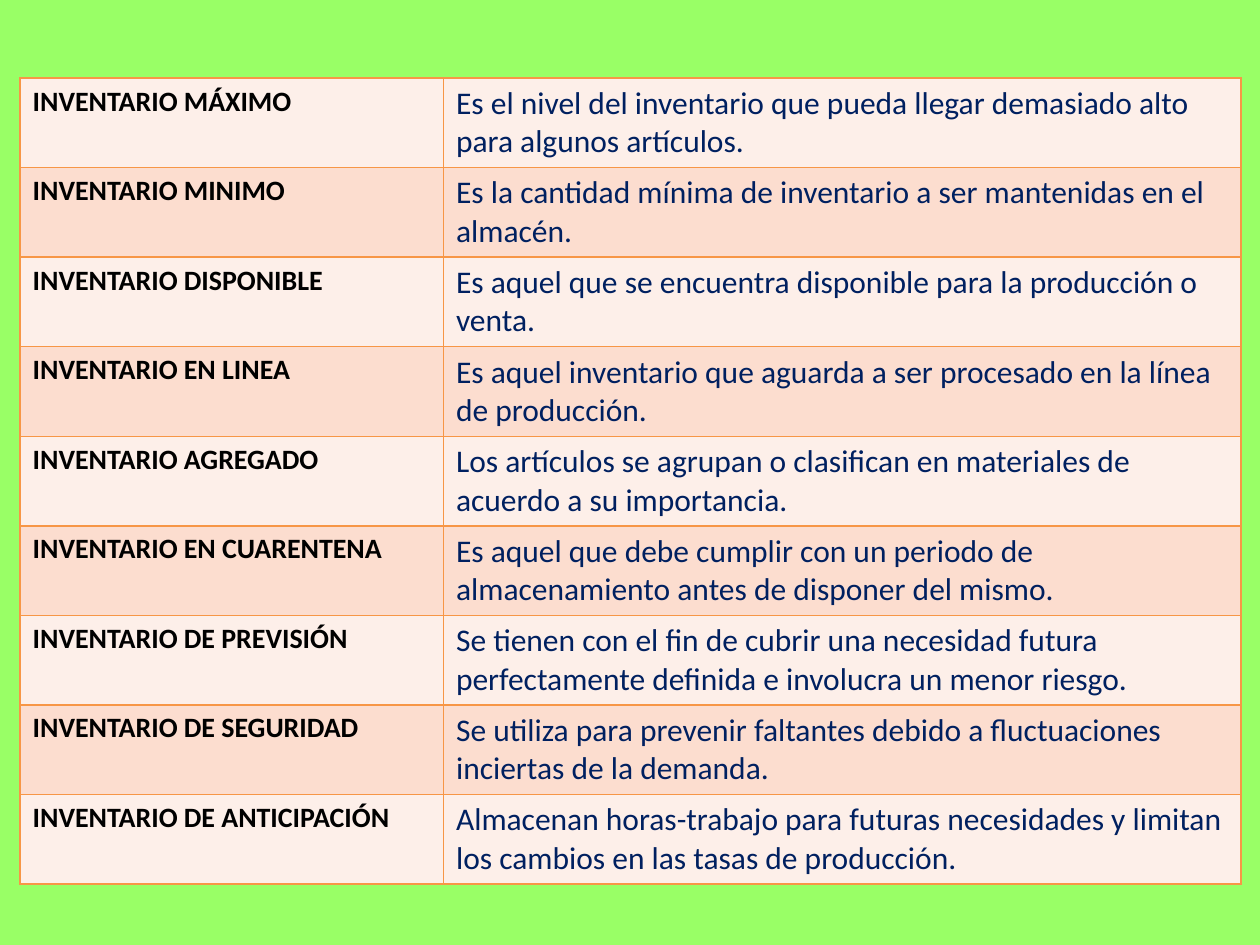
"""Build a slide with a table that defines nine kinds of inventory."""

from dataclasses import dataclass
from typing import NamedTuple

from lxml.etree import SubElement
from pptx import Presentation
from pptx.dml.color import RGBColor
from pptx.oxml.ns import qn
from pptx.slide import Slide
from pptx.table import _Cell
from pptx.util import Inches, Pt


class TextStyle(NamedTuple):
    """Size, colour and weight of a text run."""

    size: int
    color: str
    bold: bool


class InventoryKind(NamedTuple):
    """A kind of inventory and its definition."""

    term: str
    definition: str


@dataclass(frozen=True)
class Theme:
    """Colours, font and type sizes of the slide."""

    font: str = "Calibri"
    background: str = "99FF66"
    border: str = "F79646"
    border_width: int = 1
    bands: tuple[str, str] = ("FDEFE9", "FCDDCF")
    term: TextStyle = TextStyle(16, "000000", True)
    definition: TextStyle = TextStyle(18, "002060", False)


THEME = Theme()
COLUMN_WIDTHS = (3.36, 6.33)
ROW_HEIGHT = 0.7

INVENTORY_KINDS = (
    InventoryKind(
        "INVENTARIO MÁXIMO",
        "Es el nivel del inventario que pueda llegar demasiado alto para algunos artículos.",
    ),
    InventoryKind(
        "INVENTARIO MINIMO",
        "Es la cantidad mínima de inventario a ser mantenidas en el almacén.",
    ),
    InventoryKind(
        "INVENTARIO DISPONIBLE",
        "Es aquel que se encuentra disponible para la producción o venta.",
    ),
    InventoryKind(
        "INVENTARIO EN LINEA",
        "Es aquel inventario que aguarda a ser procesado en la línea de producción.",
    ),
    InventoryKind(
        "INVENTARIO AGREGADO",
        "Los artículos se agrupan o clasifican en materiales de acuerdo a su importancia.",
    ),
    InventoryKind(
        "INVENTARIO EN CUARENTENA",
        "Es aquel que debe cumplir con un periodo de almacenamiento antes de disponer del mismo.",
    ),
    InventoryKind(
        "INVENTARIO DE PREVISIÓN",
        "Se tienen con el fin de cubrir una necesidad futura perfectamente definida "
        "e involucra un menor riesgo.",
    ),
    InventoryKind(
        "INVENTARIO DE SEGURIDAD",
        "Se utiliza para prevenir faltantes debido a fluctuaciones inciertas de la demanda.",
    ),
    InventoryKind(
        "INVENTARIO DE ANTICIPACIÓN",
        "Almacenan horas-trabajo para futuras necesidades y limitan los cambios "
        "en las tasas de producción.",
    ),
)


def draw_borders(cell: _Cell) -> None:
    """Outline all four sides of a cell."""
    properties = cell._tc.get_or_add_tcPr()
    for side in ("a:lnL", "a:lnR", "a:lnT", "a:lnB"):
        border = SubElement(properties, qn(side), w=str(Pt(THEME.border_width)))
        border_fill = SubElement(border, qn("a:solidFill"))
        SubElement(border_fill, qn("a:srgbClr"), val=THEME.border)


def fill_cell(cell: _Cell, wording: str, style: TextStyle, band: str) -> None:
    """Write and format one cell of the table."""
    draw_borders(cell)
    cell.fill.solid()
    cell.fill.fore_color.rgb = RGBColor.from_string(band)
    run = cell.text_frame.paragraphs[0].add_run()
    run.text = wording
    run.font.name = THEME.font
    run.font.size = Pt(style.size)
    run.font.bold = style.bold
    run.font.color.rgb = RGBColor.from_string(style.color)


def draw_glossary(slide: Slide, kinds: tuple[InventoryKind, ...]) -> None:
    """Draw the table of inventory kinds with alternating bands."""
    glossary = slide.shapes.add_table(
        len(kinds),
        len(COLUMN_WIDTHS),
        Inches(0.16),
        Inches(0.62),
        Inches(sum(COLUMN_WIDTHS)),
        Inches(ROW_HEIGHT * len(kinds)),
    ).table
    glossary.first_row = False
    for column, width in zip(glossary.columns, COLUMN_WIDTHS):
        column.width = Inches(width)
    for index, kind in enumerate(kinds):
        band = THEME.bands[index % len(THEME.bands)]
        fill_cell(glossary.cell(index, 0), kind.term, THEME.term, band)
        fill_cell(glossary.cell(index, 1), kind.definition, THEME.definition, band)


def main() -> None:
    """Create the presentation and save it."""
    presentation = Presentation()
    presentation.slide_width = Inches(10)
    presentation.slide_height = Inches(7.5)
    slide = presentation.slides.add_slide(presentation.slide_layouts[6])
    slide.background.fill.solid()
    slide.background.fill.fore_color.rgb = RGBColor.from_string(THEME.background)
    draw_glossary(slide, INVENTORY_KINDS)
    presentation.save("out.pptx")


if __name__ == "__main__":
    main()
